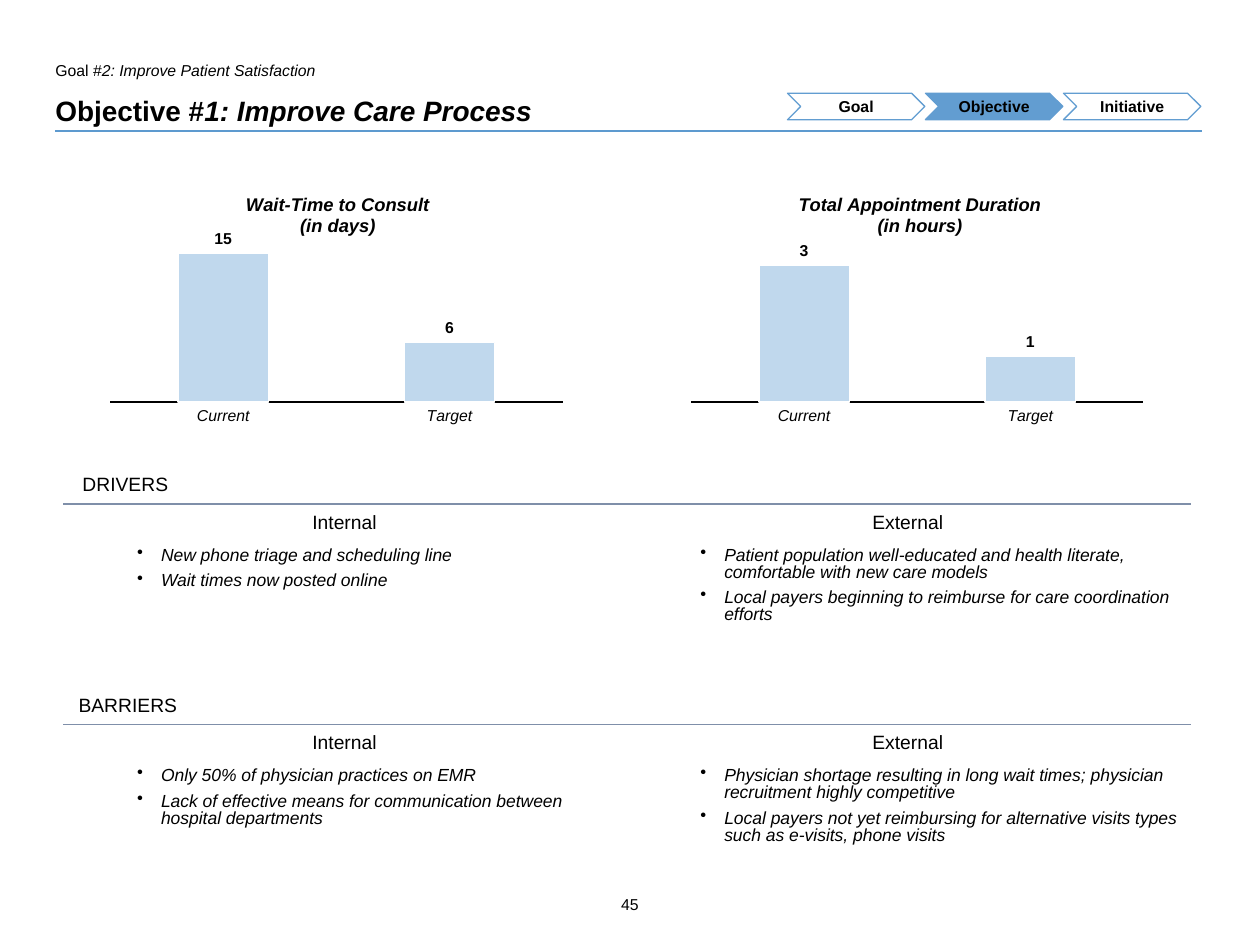
from dataclasses import dataclass

from lxml.etree import SubElement
from pptx import Presentation
from pptx.chart.data import CategoryChartData
from pptx.dml.color import RGBColor
from pptx.enum.chart import XL_CHART_TYPE, XL_LABEL_POSITION, XL_TICK_MARK
from pptx.enum.shapes import MSO_CONNECTOR, MSO_SHAPE
from pptx.enum.text import MSO_ANCHOR, PP_ALIGN
from pptx.oxml import parse_xml
from pptx.oxml.ns import nsdecls, qn
from pptx.util import Inches, Pt


@dataclass(frozen=True)
class Theme:
    font: str = "Arial"
    ink: RGBColor = RGBColor(0x00, 0x00, 0x00)
    paper: RGBColor = RGBColor(0xFF, 0xFF, 0xFF)
    accent: RGBColor = RGBColor(0x62, 0x9D, 0xD1)
    title_rule: RGBColor = RGBColor(0x5D, 0x9A, 0xCF)
    section_rule: RGBColor = RGBColor(0x7F, 0x8F, 0xA9)
    column: RGBColor = RGBColor(0xC0, 0xD8, 0xED)
    small: float = 9
    body: float = 10
    chart_title: float = 10.5
    heading: float = 11
    title: float = 16


THEME = Theme()
COLUMN_LEFTS = (0.5, 4.97)
COLUMN_WIDTH = 4.47

STEPS = ("Goal", "Objective", "Initiative")
CURRENT_STEP = "Objective"

# left, title left (share of chart width), title lines, values
CHARTS = (
    (0.8, 0.3, ("Wait-Time to Consult", "(in days)"), (15, 6)),
    (5.41, 0.24, ("Total Appointment Duration", "(in hours)"), (3, 1)),
)

# heading, heading left, rule height, points under Internal and External
SECTIONS = (
    ("DRIVERS", 0.42, 4, (
        ("New phone triage and scheduling line",
         "Wait times now posted online"),
        ("Patient population well-educated and health literate, "
         "comfortable with new care models",
         "Local payers beginning to reimburse for care coordination efforts"),
    )),
    ("BARRIERS", 0.44, 5.75, (
        ("Only 50% of physician practices on EMR",
         "Lack of effective means for communication between "
         "hospital departments"),
        ("Physician shortage resulting in long wait times; "
         "physician recruitment highly competitive",
         "Local payers not yet reimbursing for alternative visits "
         "types such as e-visits, phone visits"),
    )),
)


def style_font(font, size, bold=False, italic=False):
    font.name, font.size = THEME.font, Pt(size)
    font.bold, font.italic = bold, italic
    font.color.rgb = THEME.ink


def add_bullet(paragraph):
    paragraph.level = 1
    paragraph.line_spacing = 0.8
    paragraph.space_before = Pt(5)
    properties = paragraph._p.get_or_add_pPr()
    properties.set("marL", str(Inches(0.68)))
    properties.set("indent", str(Inches(-0.19)))
    SubElement(properties, qn("a:buChar"), char="•")


def write_text(frame, *lines, size, lead="", bold=False, italic=False,
               align=PP_ALIGN.LEFT, bullets=False):
    """Fill a frame with one paragraph a line; lead is an upright opening."""
    for index, line in enumerate(lines):
        paragraph = frame.add_paragraph() if index else frame.paragraphs[0]
        paragraph.alignment = align
        if bullets:
            add_bullet(paragraph)
        for words, slanted in ((lead, False), (line, italic)):
            if words:
                run = paragraph.add_run()
                run.text = words
                style_font(run.font, size, bold, slanted)


def set_frame(frame, inset_x, inset_y, anchor=MSO_ANCHOR.TOP):
    frame.word_wrap = True
    frame.margin_left = frame.margin_right = Inches(inset_x)
    frame.margin_top = frame.margin_bottom = Inches(inset_y)
    frame.vertical_anchor = anchor


def add_text(slide, box, *lines, insets=(0.05, 0.05), anchor=MSO_ANCHOR.TOP,
             **text_format):
    frame = slide.shapes.add_textbox(*map(Inches, box)).text_frame
    set_frame(frame, *insets, anchor)
    write_text(frame, *lines, **text_format)


def add_rule(slide, left, right, top, color, width):
    rule = slide.shapes.add_connector(
        MSO_CONNECTOR.STRAIGHT, *map(Inches, (left, top, right, top)))
    rule.line.color.rgb, rule.line.width = color, Pt(width)
    SubElement(rule._element.spPr, qn("a:effectLst"))


def add_step(slide, left, label):
    step = slide.shapes.add_shape(
        MSO_SHAPE.CHEVRON, *map(Inches, (left, 0.74, 1.09, 0.21)))
    step.shadow.inherit = False
    if label == CURRENT_STEP:
        step.fill.solid()
        step.fill.fore_color.rgb = THEME.accent
    else:
        step.fill.background()
    step.line.color.rgb, step.line.width = THEME.accent, Pt(0.75)
    set_frame(step.text_frame, 0.14, 0.07, MSO_ANCHOR.MIDDLE)
    write_text(step.text_frame, label, size=THEME.small, bold=True,
               align=PP_ALIGN.CENTER)


def place_part(part, after, target="", **shares):
    """Fix a chart part's place, in shares of the chart's size."""
    old = part.find(qn("c:layout"))
    if old is not None:
        part.remove(old)
    modes = "".join(f'<c:{axis}Mode val="edge"/>' for axis in "xy")
    sizes = "".join(f'<c:{key} val="{share}"/>' for key, share in shares.items())
    layout = parse_xml(f'<c:layout {nsdecls("c")}><c:manualLayout>{target}{modes}'
                       f'{sizes}</c:manualLayout></c:layout>')
    if after is None:
        part.insert(0, layout)
    else:
        part.find(qn(after)).addnext(layout)


def add_column_chart(slide, left, title_left, title, values):
    data = CategoryChartData(number_format="0")
    data.categories = ("Current", "Target")
    data.add_series("Series 1", values)
    chart = slide.shapes.add_chart(
        XL_CHART_TYPE.COLUMN_CLUSTERED,
        *map(Inches, (left, 1.35, 3.74, 2.07)), data).chart
    style_font(chart.font, THEME.small)
    chart.has_legend = False
    write_text(chart.chart_title.text_frame, *title, size=THEME.chart_title,
               bold=True, italic=True, align=PP_ALIGN.CENTER)
    place_part(chart.chart_title._element, "c:tx", x=title_left, y=0.07)
    place_part(chart._chartSpace.chart.plotArea, None,
               '<c:layoutTarget val="inner"/>', x=0.02, y=0.28, w=0.96, h=0.61)

    # Axes
    categories, scale = chart.category_axis, chart.value_axis
    categories.major_tick_mark = XL_TICK_MARK.NONE
    categories.format.line.color.rgb = THEME.ink
    categories.format.line.width = Pt(0.75)
    style_font(categories.tick_labels.font, THEME.small, italic=True)
    scale.has_major_gridlines = False
    scale.visible = False

    # Columns and their values
    plot = chart.plots[0]
    plot.gap_width, plot.overlap, plot.vary_by_categories = 150, -25, False
    series = plot.series[0]
    series.format.fill.solid()
    series.format.fill.fore_color.rgb = THEME.column
    series.format.line.color.rgb = THEME.paper
    series.format.line.width = Pt(0.75)
    labels = series.data_labels
    labels.show_value = True
    labels.number_format, labels.number_format_is_linked = "0", False
    labels.position = XL_LABEL_POSITION.OUTSIDE_END
    style_font(labels.font, THEME.small, bold=True)


def add_section(slide, heading, heading_left, top, columns):
    centred = {"size": THEME.heading, "align": PP_ALIGN.CENTER}
    add_text(slide, (heading_left, top - 0.3, 1.15, 0.29), heading, **centred)
    add_rule(slide, 0.5, 9.45, top, THEME.section_rule, 1)
    for left, side, points in zip(COLUMN_LEFTS, ("Internal", "External"), columns):
        add_text(slide, (left, top, COLUMN_WIDTH, 0.29), side, **centred)
        add_text(slide, (left, top + 0.3, COLUMN_WIDTH, 0.72), *points,
                 insets=(0.1, 0.05), size=THEME.body, italic=True, bullets=True)


def main():
    deck = Presentation()
    deck.slide_width, deck.slide_height = Inches(10), Inches(7.5)
    slide = deck.slides.add_slide(deck.slide_layouts[6])

    # Heading
    add_rule(slide, 0.44, 9.54, 1.04, THEME.title_rule, 0.75)
    add_text(slide, (0.44, 0.44, 2.89, 0.2), "2: Improve Patient Satisfaction",
             lead="Goal #", italic=True, size=THEME.small, insets=(0, 0.04))
    add_text(slide, (0.44, 0.74, 5.7, 0.27), "1: Improve Care Process",
             lead="Objective #", bold=True, italic=True, size=THEME.title,
             insets=(0, 0), anchor=MSO_ANCHOR.BOTTOM)
    for index, label in enumerate(STEPS):
        add_step(slide, 6.25 + 1.095 * index, label)

    # Measures, then what helps and what hinders
    for measure in CHARTS:
        add_column_chart(slide, *measure)
    for section in SECTIONS:
        add_section(slide, *section)

    # Page number
    add_text(slide, (4.66, 7.06, 0.68, 0.26), "45", size=THEME.small,
             align=PP_ALIGN.CENTER, insets=(0.04, 0.04))
    deck.save("out.pptx")


if __name__ == "__main__":
    main()
